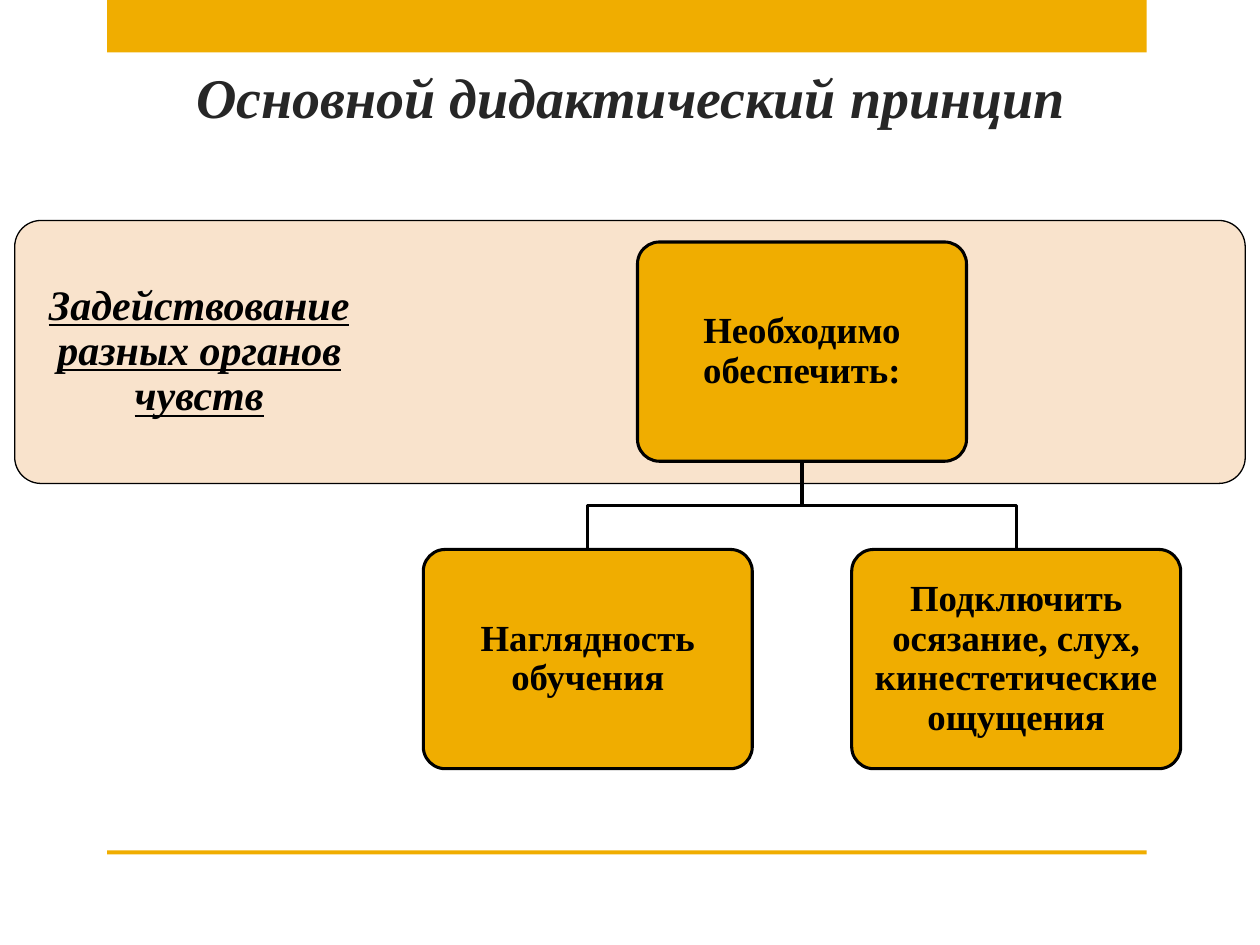
from lxml import etree
from pptx import Presentation
from pptx.dml.color import RGBColor
from pptx.enum import shapes, text
from pptx.util import Pt

AMBER = RGBColor(0xF0, 0xAD, 0x00)
CREAM = RGBColor(0xF9, 0xE3, 0xCC)
BLACK = RGBColor(0, 0, 0)
CHARCOAL = RGBColor(0x26, 0x26, 0x26)
FONT = "Times New Roman"

CARD_WIDTH, CARD_HEIGHT = 188, 125.3


def write(frame, words, size, color=BLACK, anchor=text.MSO_ANCHOR.MIDDLE,
          inset=None, spacing=0.9, italic=False, underline=None):
    frame.word_wrap = True
    frame.auto_size = text.MSO_AUTO_SIZE.NONE
    frame.vertical_anchor = anchor
    if inset is not None:
        frame.margin_left = frame.margin_right = Pt(inset)
        frame.margin_top = frame.margin_bottom = Pt(inset)
    para = frame.paragraphs[0]
    para.alignment = text.PP_ALIGN.CENTER
    para.line_spacing = spacing
    span = para.add_run()
    span.text = words
    font = span.font
    font.name, font.size, font.bold = FONT, Pt(size), True
    font.italic, font.underline = italic, underline
    font.color.rgb = color


def add_block(page, kind, box, fill, line_width=None):
    block = page.shapes.add_shape(kind, *map(Pt, box))
    block.shadow.inherit = False
    block.fill.solid()
    block.fill.fore_color.rgb = fill
    if line_width is None:
        block.line.fill.background()
    else:
        block.line.color.rgb = BLACK
        block.line.width = Pt(line_width)
    if kind == shapes.MSO_SHAPE.ROUNDED_RECTANGLE:
        block.adjustments[0] = 0.1
    return block


def add_frame_bars(page, left, width):
    for top, height in ((0, 30), (486, 2.2)):
        add_block(page, shapes.MSO_SHAPE.RECTANGLE, (left, top, width, height), AMBER)


def add_title(page, box, words):
    title = page.shapes.title
    title.left, title.top, title.width, title.height = map(Pt, box)
    write(title.text_frame, words, 32, CHARCOAL, text.MSO_ANCHOR.BOTTOM,
          spacing=1.0, italic=True)


def add_band(page, box, words):
    """Wide panel with its label in the left 30 percent."""
    left, top, width, height = box
    add_block(page, shapes.MSO_SHAPE.ROUNDED_RECTANGLE, box, CREAM, 0.75)
    label = page.shapes.add_textbox(Pt(left), Pt(top), Pt(width * 0.3), Pt(height))
    write(label.text_frame, words, 24, inset=13.7, italic=True, underline=True)


def add_card(page, center, top, words):
    box = (center - CARD_WIDTH / 2, top, CARD_WIDTH, CARD_HEIGHT)
    card = add_block(page, shapes.MSO_SHAPE.ROUNDED_RECTANGLE, box, AMBER, 1.75)
    write(card.text_frame, words, 21, inset=6.5)


def add_branch(page, start, end):
    """Bent line that turns halfway down."""
    (x1, y1), (x2, y2) = start, end
    middle = (y1 + y2) / 2
    builder = page.shapes.build_freeform(Pt(x1), Pt(y1))
    points = [(Pt(x), Pt(y)) for x, y in ((x1, middle), (x2, middle), (x2, y2))]
    builder.add_line_segments(points, close=False)
    branch = builder.convert_to_shape()
    branch.shadow.inherit = False
    branch.fill.background()
    branch.line.color.rgb = BLACK
    branch.line.width = Pt(1.75)


def add_tree(page, box, root, children):
    """Root card centred above evenly spread child cards."""
    left, top, width, height = box
    center = left + width / 2
    child_top = top + height - CARD_HEIGHT
    step = (width - CARD_WIDTH) / (len(children) - 1)
    add_card(page, center, top, root)
    for index, words in enumerate(children):
        child_center = left + CARD_WIDTH / 2 + index * step
        add_branch(page, (center, top + CARD_HEIGHT), (child_center, child_top))
        add_card(page, child_center, child_top, words)


def main():
    deck = Presentation()
    deck.slide_width, deck.slide_height = Pt(720), Pt(540)
    page = deck.slides.add_slide(deck.slide_layouts[5])
    add_frame_bars(page, 61.2, 594)
    add_title(page, (93.6, 49, 534.2, 28.8), "Основной дидактический принцип")
    add_band(page, (8.4, 126, 703.2, 150.3), "Задействование разных органов чувств")
    add_tree(page, (241.9, 138.3, 432.8, 301), "Необходимо обеспечить:",
             ("Наглядность обучения",
              "Подключить осязание, слух, кинестетические ощущения"))
    deck.save("out.pptx")


if __name__ == "__main__":
    main()
